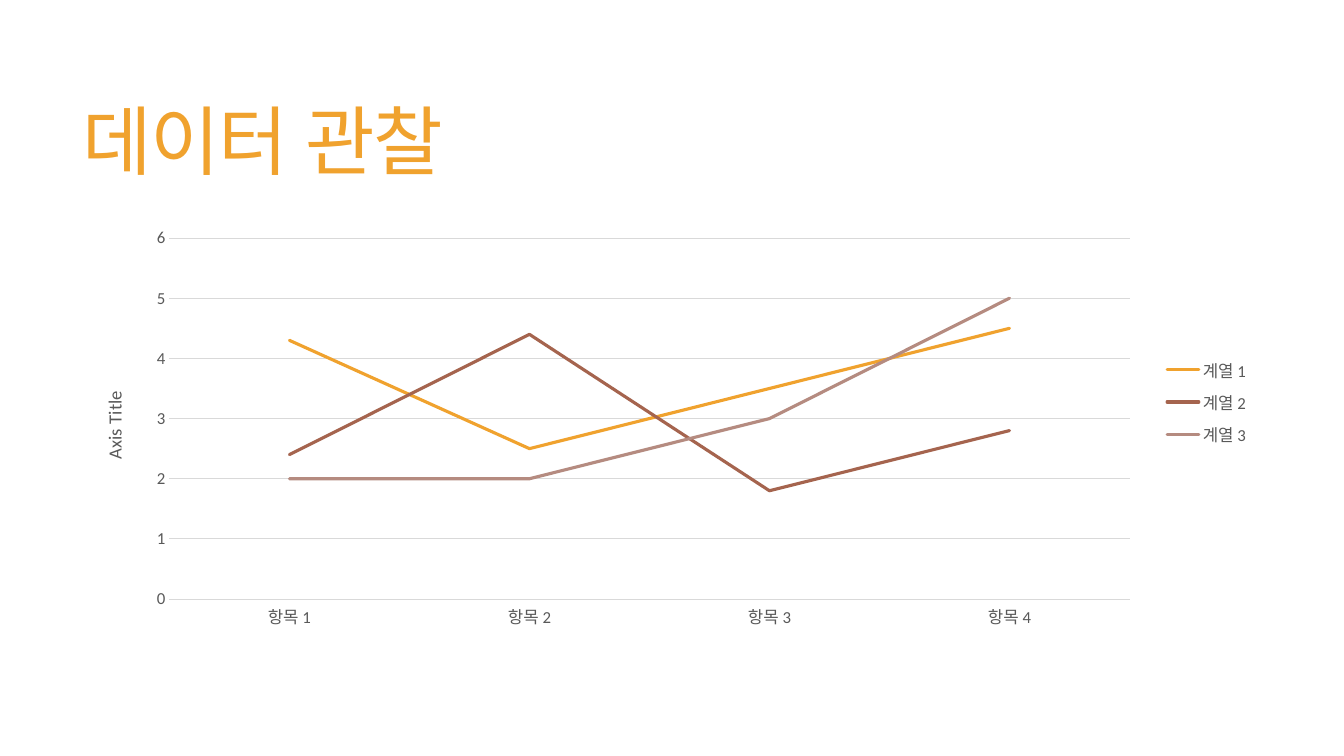
from lxml import etree
from pptx import Presentation
from pptx.chart.data import CategoryChartData
from pptx.dml.color import RGBColor
from pptx.enum.chart import XL_CHART_TYPE, XL_LEGEND_POSITION, XL_TICK_MARK
from pptx.enum.text import MSO_ANCHOR, MSO_AUTO_SIZE, PP_ALIGN
from pptx.oxml.ns import qn
from pptx.util import Inches, Pt

LINE_CHART = XL_CHART_TYPE.LINE
LEGEND_RIGHT = XL_LEGEND_POSITION.RIGHT
NO_TICK = XL_TICK_MARK.NONE
MIDDLE = MSO_ANCHOR.MIDDLE
NO_FIT = MSO_AUTO_SIZE.NONE
LEFT = PP_ALIGN.LEFT

WIDTH, HEIGHT = 13.33, 7.5
TITLE_ONLY = 5
GREY, PALE = "595959", "D9D9D9"
CATEGORIES = ["항목 1", "항목 2", "항목 3", "항목 4"]
SERIES = {
    "계열 1": ("F0A22E", [4.3, 2.5, 3.5, 4.5]),
    "계열 2": ("A5644E", [2.4, 4.4, 1.8, 2.8]),
    "계열 3": ("B58B80", [2, 2, 3, 5]),
}


def color(value):
    return RGBColor.from_string(value)


def set_attributes(target, values):
    for name, value in values.items():
        setattr(target, name, value)


class SlideBuilder:
    def __init__(self, presentation):
        layout = presentation.slide_layouts[TITLE_ONLY]
        self.slide = presentation.slides.add_slide(layout)
        self.chart_font = "Calibri"
        self.title_font = "Arial"

    def box(self, left, top, width, height):
        return dict(
            left=Inches(left * WIDTH), top=Inches(top * HEIGHT),
            width=Inches(width * WIDTH), height=Inches(height * HEIGHT),
        )

    def style_font(self, font, size, name, shade):
        set_attributes(font, {"size": Pt(size), "name": name, "bold": False})
        font.color.rgb = color(shade)

    def style_line(self, line, shade, width):
        line.color.rgb = color(shade)
        line.width = Pt(width)

    def place(self, element, shares, inner=False):
        for old in element.findall(qn("c:layout")):
            element.remove(old)
        layout = etree.Element(qn("c:layout"))
        manual = etree.SubElement(layout, qn("c:manualLayout"))
        values = {"layoutTarget": "inner"} if inner else {}
        values.update(xMode="edge", yMode="edge")
        values.update(zip("xywh", shares))
        for name, value in values.items():
            etree.SubElement(manual, qn(f"c:{name}")).set("val", str(value))
        overlay = element.find(qn("c:overlay"))
        if overlay is None:
            element.insert(0, layout)
        else:
            overlay.addprevious(layout)

    def title(self, text, box, size, shade):
        shape = self.slide.shapes.title
        set_attributes(shape, self.box(*box))
        frame = shape.text_frame
        frame.text = text
        set_attributes(frame, {
            "word_wrap": True, "auto_size": NO_FIT, "vertical_anchor": MIDDLE,
        })
        paragraph = frame.paragraphs[0]
        set_attributes(paragraph, {"alignment": LEFT, "line_spacing": 0.85})
        run = paragraph.runs[0]
        self.style_font(run.font, size, self.title_font, shade)
        properties = run.font._element
        properties.set("spc", "-120")
        etree.SubElement(properties, qn("a:ea")).set("typeface", self.title_font)

    def line_chart(self, categories, series_values, box):
        data = CategoryChartData()
        data.categories = categories
        for name, (shade, values) in series_values.items():
            data.add_series(name, values)
        frame = self.slide.shapes.add_chart(
            LINE_CHART, **dict(zip(("x", "y", "cx", "cy"), self.box(*box).values())),
            chart_data=data,
        )
        chart = frame.chart
        chart.has_title = False
        self.style_font(chart.font, 10, self.chart_font, "000000")
        plot = chart.plots[0]
        plot.vary_by_categories = False
        for series, (shade, values) in zip(plot.series, series_values.values()):
            series.smooth = False
            self.style_line(series.format.line, shade, 2.25)
            series._element.find(".//" + qn("a:ln")).set("cap", "rnd")
        self.place(chart._chartSpace.chart.plotArea, (0.08, 0.04, 0.81, 0.87), True)
        self.axes(chart)
        self.legend(chart)

    def axes(self, chart):
        for axis in (chart.category_axis, chart.value_axis):
            set_attributes(axis, {
                "major_tick_mark": NO_TICK, "minor_tick_mark": NO_TICK,
            })
            self.style_font(axis.tick_labels.font, 12, self.chart_font, GREY)
        self.style_line(chart.category_axis.format.line, PALE, 0.75)
        axis = chart.value_axis
        set_attributes(axis, {
            "minimum_scale": 0, "maximum_scale": 6, "major_unit": 1,
            "has_major_gridlines": True, "has_title": True,
        })
        axis.format.line.fill.background()
        self.style_line(axis.major_gridlines.format.line, PALE, 0.75)
        frame = axis.axis_title.text_frame
        frame.text = "Axis Title"
        frame._txBody.bodyPr.set("rot", "-5400000")
        font = frame.paragraphs[0].runs[0].font
        self.style_font(font, 13.3, self.chart_font, GREY)
        self.place(axis.axis_title._element, (0.02, 0.4))

    def legend(self, chart):
        chart.has_legend = True
        set_attributes(chart.legend, {
            "position": LEGEND_RIGHT, "include_in_layout": False,
        })
        self.style_font(chart.legend.font, 12, self.chart_font, GREY)
        self.place(chart.legend._element, (0.91, 0.31, 0.09, 0.25))


def main():
    presentation = Presentation()
    set_attributes(presentation, {
        "slide_width": Inches(WIDTH), "slide_height": Inches(HEIGHT),
    })
    builder = SlideBuilder(presentation)
    builder.title("데이터 관찰", (0.054, 0.073, 0.884, 0.241), 54, "F0A22E")
    builder.line_chart(CATEGORIES, SERIES, (0.0555, 0.293, 0.882, 0.549))
    presentation.save("out.pptx")


if __name__ == "__main__":
    main()
